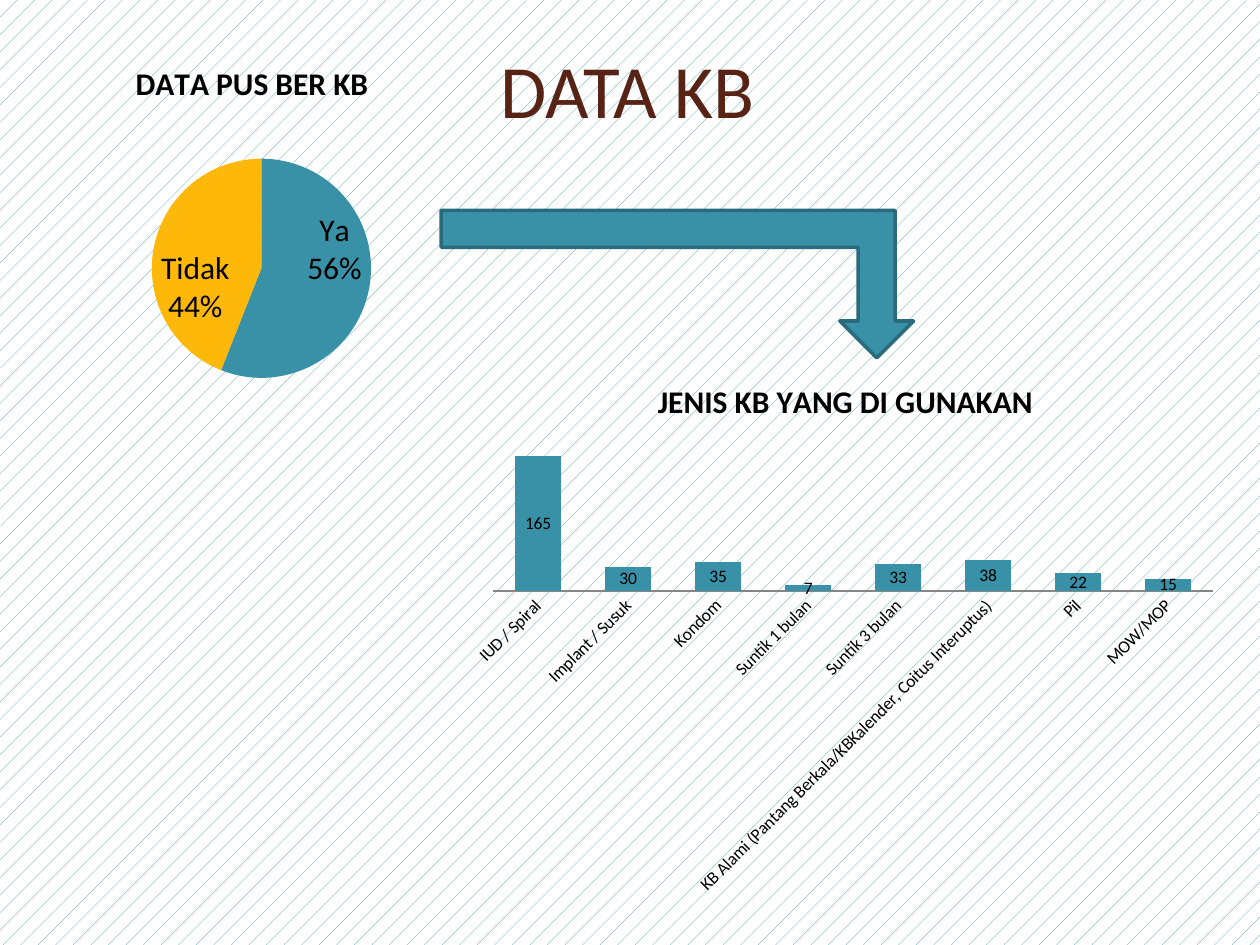
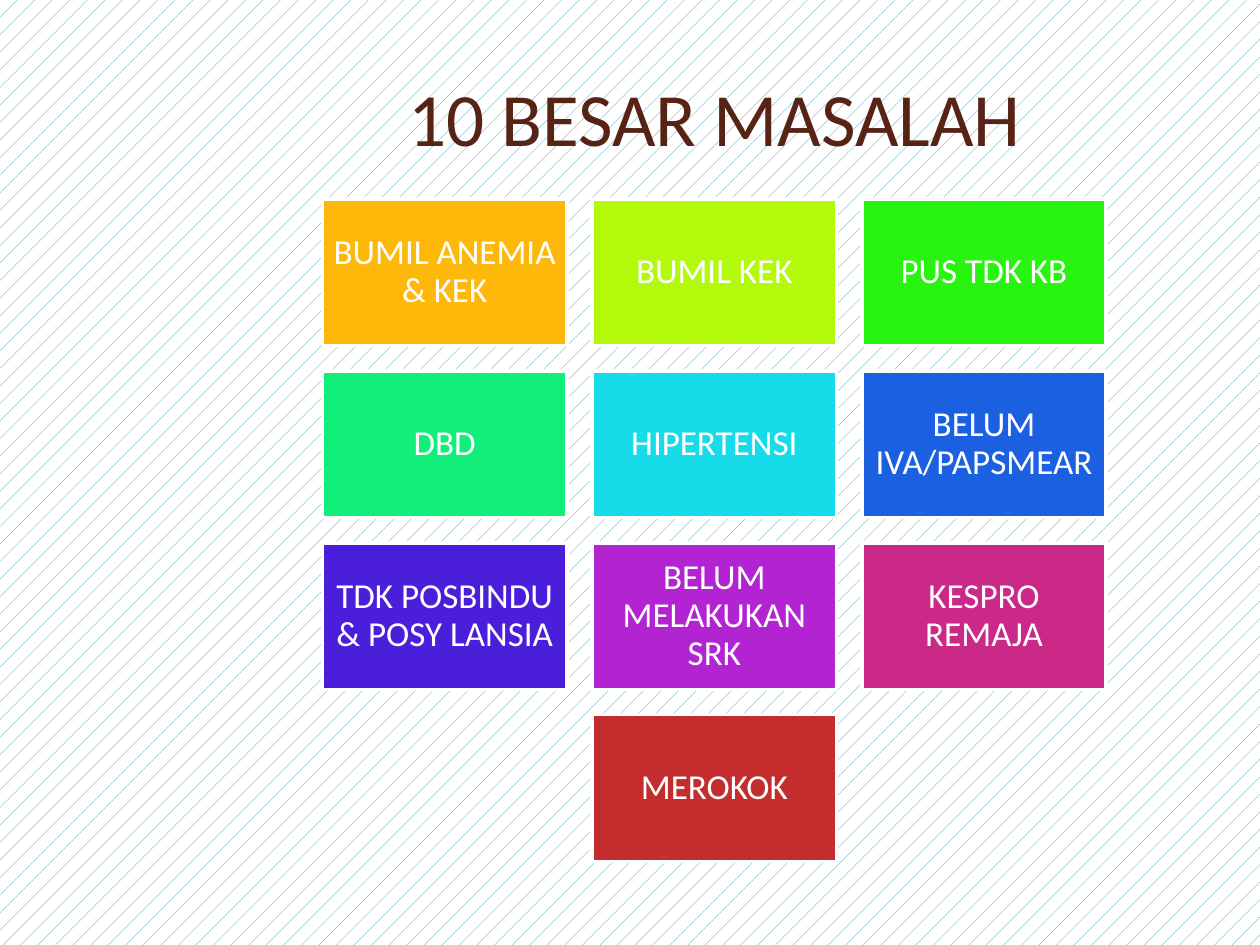
from lxml import etree
from pptx import Presentation
from pptx.chart.data import CategoryChartData
from pptx.dml.color import RGBColor
from pptx.enum.chart import XL_CHART_TYPE, XL_LABEL_POSITION, XL_TICK_MARK
from pptx.enum.dml import MSO_PATTERN
from pptx.enum.shapes import MSO_SHAPE
from pptx.enum.text import MSO_ANCHOR, PP_ALIGN
from pptx.oxml.ns import qn
from pptx.util import Inches, Pt

PIE = XL_CHART_TYPE.PIE
STACKED_COLUMNS = XL_CHART_TYPE.COLUMN_STACKED
INSIDE_END = XL_LABEL_POSITION.INSIDE_END
LABEL_CENTER = XL_LABEL_POSITION.CENTER
NO_TICKS = XL_TICK_MARK.NONE
FIVE_PERCENT = MSO_PATTERN.PERCENT_5
RECTANGLE = MSO_SHAPE.RECTANGLE
BENT_ARROW = MSO_SHAPE.BENT_UP_ARROW
MIDDLE = MSO_ANCHOR.MIDDLE
CENTER = PP_ALIGN.CENTER

FONT = "Calibri"
TEAL = "3891A7"
DARK_TEAL = "296B7C"
AMBER = "FEB80A"
BROWN = "572314"
GRAY = "868686"
WHITE = "FFFFFF"
BLACK = "000000"

FAMILY_PLANNING = [("Ya", 56), ("Tidak", 44)]
METHODS = [
    ("IUD / Spiral", 165),
    ("Implant / Susuk", 30),
    ("Kondom", 35),
    ("Suntik 1 bulan", 7),
    ("Suntik 3 bulan", 33),
    ("KB Alami (Pantang Berkala/KBKalender, Coitus Interuptus)", 38),
    ("Pil", 22),
    ("MOW/MOP", 15),
]
PROBLEMS = [
    ("BUMIL ANEMIA & KEK", AMBER),
    ("BUMIL KEK", "B2F90C"),
    ("PUS TDK KB", "29F40F"),
    ("DBD", "12EE7A"),
    ("HIPERTENSI", "16DBE8"),
    ("BELUM IVA/PAPSMEAR", "1B60E0"),
    ("TDK POSBINDU & POSY LANSIA", "4B1FD9"),
    ("BELUM MELAKUKAN SRK", "B224D1"),
    ("KESPRO REMAJA", "CA2988"),
    ("MEROKOK", "C32D2E"),
]
COLUMNS = 3
TILE_LEFT, TILE_TOP = 2.56, 1.58
TILE_WIDTH, TILE_GAP = 1.94, 0.2
TILE_HEIGHT = 0.6 * TILE_WIDTH


def color(hex_value):
    """Turn a hex string into a colour."""
    return RGBColor.from_string(hex_value)


def set_font(font, size, hex_value):
    """Apply the shared typeface with a size and colour."""
    font.name = FONT
    font.size = Pt(size)
    font.color.rgb = color(hex_value)


def add_slide(presentation):
    """Add a blank slide with the patterned background."""
    slide = presentation.slides.add_slide(presentation.slide_layouts[6])
    fill = slide.background.fill
    fill.patterned()
    fill.pattern = FIVE_PERCENT
    fill.fore_color.rgb = color(TEAL)
    fill.back_color.rgb = color(WHITE)
    return slide


def write_text(shape, text, size, hex_value):
    """Write one centred paragraph into a shape."""
    frame = shape.text_frame
    frame.word_wrap = True
    frame.vertical_anchor = MIDDLE
    paragraph = frame.paragraphs[0]
    paragraph.text = text
    paragraph.alignment = CENTER
    set_font(paragraph.font, size, hex_value)
    return frame


def add_title(slide, text, left, top):
    """Add the slide title."""
    box = slide.shapes.add_textbox(
        Inches(left), Inches(top), Inches(8.2), Inches(1.25))
    write_text(box, text, 43, BROWN)


def add_shape(slide, kind, left, top, width, height, fill, line):
    """Add a filled and outlined preset shape without a shadow."""
    shape = slide.shapes.add_shape(
        kind, Inches(left), Inches(top), Inches(width), Inches(height))
    shape.shadow.inherit = False
    shape.fill.solid()
    shape.fill.fore_color.rgb = color(fill)
    shape.line.color.rgb = color(line)
    shape.line.width = Pt(2)
    return shape


def add_bent_arrow(slide):
    """Add the arrow leading from the pie to the columns."""
    arrow = add_shape(slide, BENT_ARROW, 3.5, 1.67, 3.75, 1.17, TEAL, DARK_TEAL)
    arrow.rotation = 180
    arrow.element.spPr.find(qn("a:xfrm")).set("flipH", "1")


def find_part(chart, tag):
    """Find the first chart element with a tag."""
    return chart.element.find(".//" + qn(tag))


def place_plot(chart, **fractions):
    """Fix the inner plot area as fractions of the chart."""
    plot_area = find_part(chart, "c:plotArea")
    for old_layout in plot_area.findall(qn("c:layout")):
        plot_area.remove(old_layout)
    layout = etree.Element(qn("c:layout"))
    manual = etree.SubElement(layout, qn("c:manualLayout"))
    settings = {"layoutTarget": "inner", "xMode": "edge", "yMode": "edge"}
    for name, value in (settings | fractions).items():
        etree.SubElement(manual, qn(f"c:{name}")).set("val", str(value))
    plot_area.insert(0, layout)


def add_chart(slide, kind, title, rows, left, top, width, height):
    """Add a titled single-series chart without a legend."""
    data = CategoryChartData()
    data.categories = [name for name, _ in rows]
    data.add_series("Series 1", [value for _, value in rows])
    chart = slide.shapes.add_chart(
        kind, Inches(left), Inches(top), Inches(width), Inches(height), data).chart
    set_font(chart.font, 10, BLACK)
    chart.has_legend = False
    chart.has_title = True
    paragraph = chart.chart_title.text_frame.paragraphs[0]
    paragraph.text = title
    set_font(paragraph.font, 18, BLACK)
    paragraph.font.bold = True
    return chart


def add_labels(series, size, position):
    """Show data labels on a series."""
    labels = series.data_labels
    set_font(labels.font, size, BLACK)
    labels.position = position
    labels.show_value = True
    return labels


def add_pie(slide):
    """Add the pie of couples using family planning."""
    chart = add_chart(
        slide, PIE, "DATA PUS BER KB", FAMILY_PLANNING, -0.5, 0.33, 5, 3)
    place_plot(chart, x=0.34, y=0.31, w=0.35, h=0.58)
    series = chart.plots[0].series[0]
    for index, hex_value in enumerate((TEAL, AMBER)):
        fill = series.points[index].format.fill
        fill.solid()
        fill.fore_color.rgb = color(hex_value)
    labels = add_labels(series, 18, INSIDE_END)
    labels.show_value = False
    labels.show_category_name = True
    labels.show_percentage = True
    separator = etree.Element(qn("c:separator"))
    separator.text = "\n"
    series_labels = find_part(chart, "c:ser").find(qn("c:dLbls"))
    series_labels.find(qn("c:showBubbleSize")).addnext(separator)


def add_method_columns(slide):
    """Add the column chart of family planning methods."""
    chart = add_chart(
        slide, STACKED_COLUMNS, "JENIS KB YANG DI GUNAKAN", METHODS,
        3.67, 2.83, 6.08, 4.33)
    place_plot(chart, x=0.04, y=0.16, w=0.94, h=0.27)
    plot = chart.plots[0]
    plot.vary_by_categories = False
    plot.gap_width = 95
    plot.overlap = 100
    series = plot.series[0]
    series.format.fill.solid()
    series.format.fill.fore_color.rgb = color(TEAL)
    add_labels(series, 10, LABEL_CENTER)
    value_axis = chart.value_axis
    value_axis.visible = False
    value_axis.has_major_gridlines = False
    value_axis.minimum_scale = 0
    value_axis.maximum_scale = 180
    category_axis = chart.category_axis
    category_axis.major_tick_mark = NO_TICKS
    category_axis.format.line.color.rgb = color(GRAY)
    set_font(category_axis.tick_labels.font, 10, BLACK)
    label_text = find_part(chart, "c:catAx").find(qn("c:txPr"))
    label_text.find(qn("a:bodyPr")).set("rot", "-2700000")


def add_problem_grid(slide):
    """Add the problem tiles in rows, centring a short last row."""
    for index, (text, fill) in enumerate(PROBLEMS):
        row, column = divmod(index, COLUMNS)
        tiles_in_row = min(COLUMNS, len(PROBLEMS) - row * COLUMNS)
        column += (COLUMNS - tiles_in_row) / 2
        tile = add_shape(
            slide, RECTANGLE,
            TILE_LEFT + column * (TILE_WIDTH + TILE_GAP),
            TILE_TOP + row * (TILE_HEIGHT + TILE_GAP),
            TILE_WIDTH, TILE_HEIGHT, fill, WHITE)
        frame = write_text(tile, text, 20, WHITE)
        frame.margin_left = frame.margin_right = Inches(0.08)
        frame.margin_top = frame.margin_bottom = Inches(0.08)
        frame.paragraphs[0].line_spacing = 0.9


def main():
    """Build both slides and save the presentation."""
    presentation = Presentation()
    presentation.slide_width = Inches(10)
    presentation.slide_height = Inches(7.5)

    slide = add_slide(presentation)
    add_title(slide, "DATA KB", 0.88, 0.08)
    add_bent_arrow(slide)
    add_pie(slide)
    add_method_columns(slide)

    slide = add_slide(presentation)
    add_title(slide, "10 BESAR MASALAH", 1.57, 0.3)
    add_problem_grid(slide)

    presentation.save("out.pptx")


if __name__ == "__main__":
    main()
